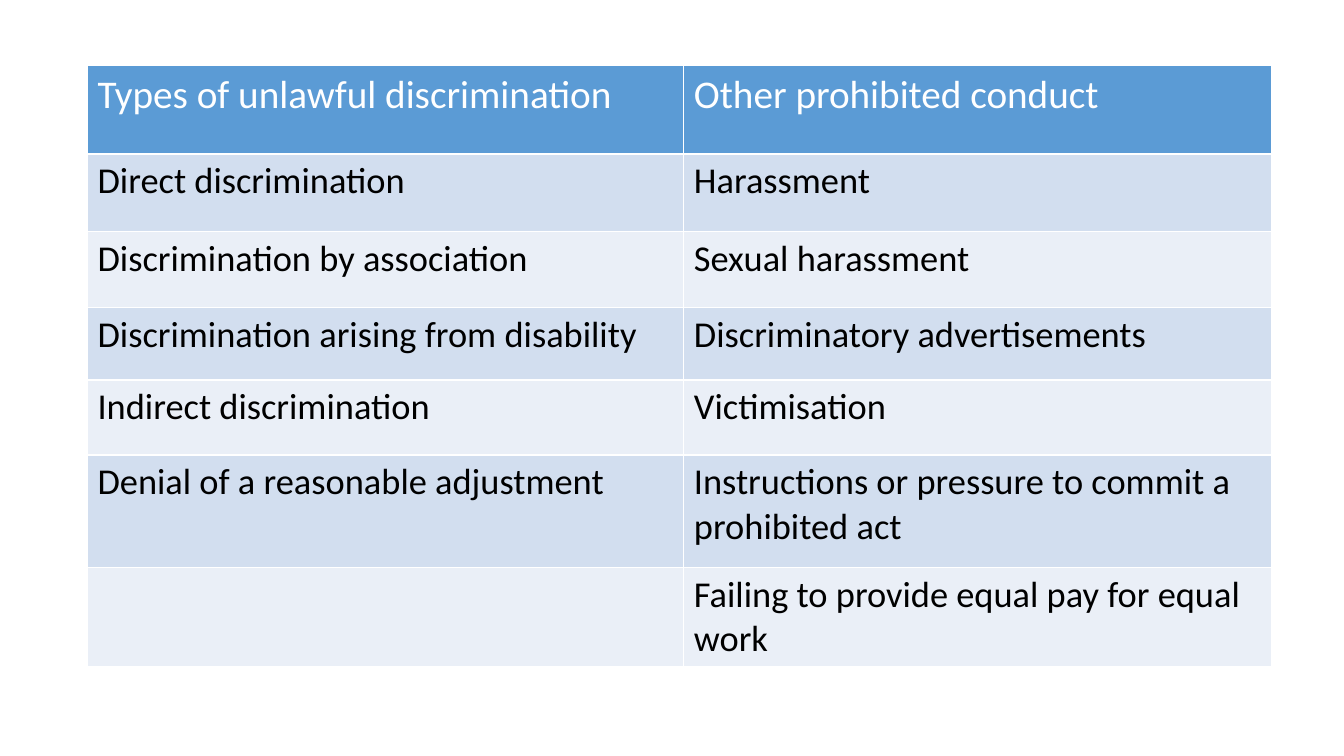
from pptx import Presentation
from pptx.dml.color import RGBColor as Color
from pptx.util import Pt

ROWS = [
    ("Types of unlawful discrimination", "Other prohibited conduct"),
    ("Direct discrimination", "Harassment"),
    ("Discrimination by association", "Sexual harassment"),
    ("Discrimination arising from disability", "Discriminatory advertisements"),
    ("Indirect discrimination", "Victimisation"),
    ("Denial of a reasonable adjustment",
     "Instructions or pressure to commit a prohibited act"),
    ("", "Failing to provide equal pay for equal work"),
]
COLUMN_WIDTHS = (426, 420)
ROW_HEIGHTS = (63, 55.5, 54, 52, 53.5, 80.5, 70)
LEFT, TOP = 62.5, 47
COLORS = {
    "header": "5B9BD5",
    "odd": "D2DEEF",
    "even": "EAEFF7",
    "header_text": "FFFFFF",
    "body_text": "000000",
}


def color(name):
    return Color.from_string(COLORS[name])


def fill_cell(cell, text, row, column):
    is_header = row == 0
    band = "header" if is_header else "odd" if row % 2 else "even"
    cell.fill.solid()
    cell.fill.fore_color.rgb = color(band)
    if not text:
        return
    para = cell.text_frame.paragraphs[0]
    para.text = text
    if column == 1 and not is_header:
        para.space_before = para.space_after = Pt(12)
    font = para.runs[0].font
    font.name = "Calibri"
    font.size = Pt(28 if is_header else 26)
    font.bold = False
    font.color.rgb = color("header_text" if is_header else "body_text")


def main():
    deck = Presentation()
    deck.slide_width, deck.slide_height = Pt(960), Pt(540)
    page = deck.slides.add_slide(deck.slide_layouts[6])
    table = page.shapes.add_table(
        len(ROWS), len(COLUMN_WIDTHS), Pt(LEFT), Pt(TOP),
        Pt(sum(COLUMN_WIDTHS)), Pt(sum(ROW_HEIGHTS))).table
    for column, width in zip(table.columns, COLUMN_WIDTHS):
        column.width = Pt(width)
    for row, height in zip(table.rows, ROW_HEIGHTS):
        row.height = Pt(height)
    for row, texts in enumerate(ROWS):
        for column, text in enumerate(texts):
            fill_cell(table.cell(row, column), text, row, column)
    deck.save("out.pptx")


if __name__ == "__main__":
    main()
